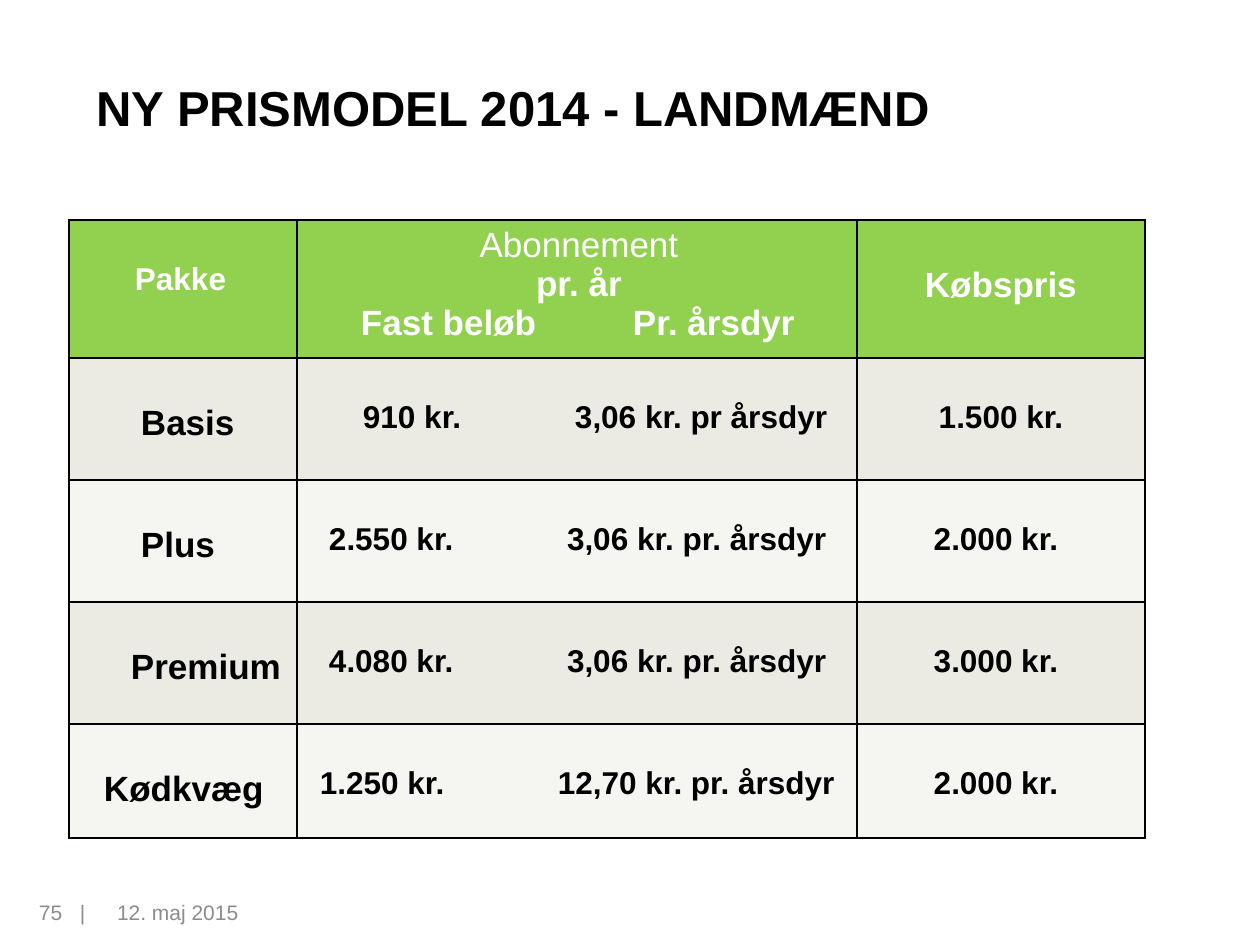
from lxml import etree
from pptx import Presentation
from pptx import util as u
from pptx.dml.color import RGBColor
from pptx.enum import text as t
from pptx.oxml import ns, parse_xml

# Content; the numbers are text starts, in px from the cell's left edge
TITLE = "NY PRISMODEL 2014 - LANDMÆND"
PAGE, DATE = "75\t|", "12. maj 2015"
HEADER = {
    "package": ("Pakke", 66),
    "subscription": (["Abonnement", "pr. år", "Fast beløb\tPr. årsdyr"], 64, 336),
    "price": "Købspris",
}
# package, start, fixed amount, rate per animal, their starts, price, right margin
PACKAGES = [
    ("Basis", 72, "910 kr.", "3,06 kr. pr årsdyr", 66, 278, "1.500 kr.", 12),
    ("Plus", 72, "2.550 kr.", "3,06 kr. pr. årsdyr", 32, 270, "2.000 kr.", 22),
    ("Premium", 62, "4.080 kr.", "3,06 kr. pr. årsdyr", 32, 270, "3.000 kr.", 22),
    ("Kødkvæg", 35, "1.250 kr.", "12,70 kr. pr. årsdyr", 23, 261, "2.000 kr.", 22),
]
THEME = dict(font="Arial", ink="000000", white="FFFFFF", footer="8C8C8C", header="92D050",
             bands=("EBEBE4", "F5F5F2"), title_pt=28, large_pt=20, medium_pt=18, footer_pt=12)

COLUMNS = [228, 560, 288]
ROWS = [130, 122, 122, 122, 114]
LEFT, CENTER = t.PP_ALIGN.LEFT, t.PP_ALIGN.CENTER
TOP_MARGIN = {THEME["large_pt"]: 46, THEME["medium_pt"]: 42}


def px(n):
    return u.Emu(round(n * 914400 / 126))


def style(paragraph, size, color, bold=False, align=LEFT):
    paragraph.alignment = align
    for run in paragraph.runs:
        run.font.name, run.font.size, run.font.bold = THEME["font"], u.Pt(size), bold
        run.font.color.rgb = RGBColor.from_string(color)


def add_tab(paragraph, position):
    tabs = etree.SubElement(paragraph._p.get_or_add_pPr(), ns.qn("a:tabLst"))
    etree.SubElement(tabs, ns.qn("a:tab"), pos=str(px(position)), algn="l")


def set_borders(cell):
    for i, side in enumerate("LRTB"):
        cell._tc.get_or_add_tcPr().insert(i, parse_xml(
            f'<a:ln{side} {ns.nsdecls("a")} w="12700"><a:solidFill>'
            f'<a:srgbClr val="{THEME["ink"]}"/></a:solidFill></a:ln{side}>'))


def fill_cell(cell, text, size, color, fill, left=12, right=12, top=None, align=LEFT, tab=None):
    cell.text_frame.text = text
    cell.margin_left, cell.margin_right = px(left), px(right)
    cell.margin_top = px(TOP_MARGIN[size] if top is None else top)
    cell.margin_bottom = px(6)
    for paragraph in cell.text_frame.paragraphs:
        if "\t" in paragraph.text:
            add_tab(paragraph, tab - left)
            style(paragraph, size, color, True)
        else:
            style(paragraph, size, color, True, align)
    cell.fill.solid()
    cell.fill.fore_color.rgb = RGBColor.from_string(fill)
    set_borders(cell)


def add_footer(slide, text, left, width, margin, tab=None):
    frame = slide.shapes.add_textbox(px(left), px(893), px(width), px(50)).text_frame
    frame.word_wrap = True
    frame.margin_left = px(margin)
    frame.text = text
    if tab:
        add_tab(frame.paragraphs[0], tab)
    style(frame.paragraphs[0], THEME["footer_pt"], THEME["footer"])


def add_prices(slide):
    table = slide.shapes.add_table(len(ROWS), len(COLUMNS), px(69), px(220),
                                   px(sum(COLUMNS)), px(sum(ROWS))).table
    for column, width in zip(table.columns, COLUMNS):
        column.width = px(width)
    for row, height in zip(table.rows, ROWS):
        row.height = px(height)
    large, medium = THEME["large_pt"], THEME["medium_pt"]

    # Header row
    colors = dict(color=THEME["white"], fill=THEME["header"])
    name, start = HEADER["package"]
    fill_cell(table.cell(0, 0), name, medium, left=start, **colors)
    lines, start, tab = HEADER["subscription"]
    fill_cell(table.cell(0, 1), "\n".join(lines), large, left=start, right=60, top=6,
              align=CENTER, tab=tab, **colors)
    table.cell(0, 1).text_frame.paragraphs[0].runs[0].font.bold = False
    fill_cell(table.cell(0, 2), HEADER["price"], large, align=CENTER, **colors)

    # Package rows
    for r, (name, start, amount, rate, amount_x, rate_x, price, right) in enumerate(PACKAGES, 1):
        colors = dict(color=THEME["ink"], fill=THEME["bands"][(r - 1) % 2])
        fill_cell(table.cell(r, 0), name, large, left=start, **colors)
        fill_cell(table.cell(r, 1), f"{amount}\t{rate}", medium, left=amount_x, tab=rate_x, **colors)
        fill_cell(table.cell(r, 2), price, medium, right=right, align=CENTER, **colors)


def main():
    prs = Presentation()
    prs.slide_width, prs.slide_height = u.Inches(10), u.Inches(7.5)
    slide = prs.slides.add_slide(prs.slide_layouts[5])

    # Title
    title = slide.shapes.title
    title.left, title.top, title.width, title.height = px(84), px(55), px(1113), px(158)
    title.text_frame.text = TITLE
    title.text_frame.vertical_anchor = t.MSO_ANCHOR.MIDDLE
    title.text_frame.margin_bottom = px(60)
    style(title.text_frame.paragraphs[0], THEME["title_pt"], THEME["ink"], True)

    # Footer and table
    add_footer(slide, DATE, 105, 294, 12)
    add_footer(slide, PAGE, 0, 98, 39, tab=41)
    add_prices(slide)
    prs.save("out.pptx")


if __name__ == "__main__":
    main()
